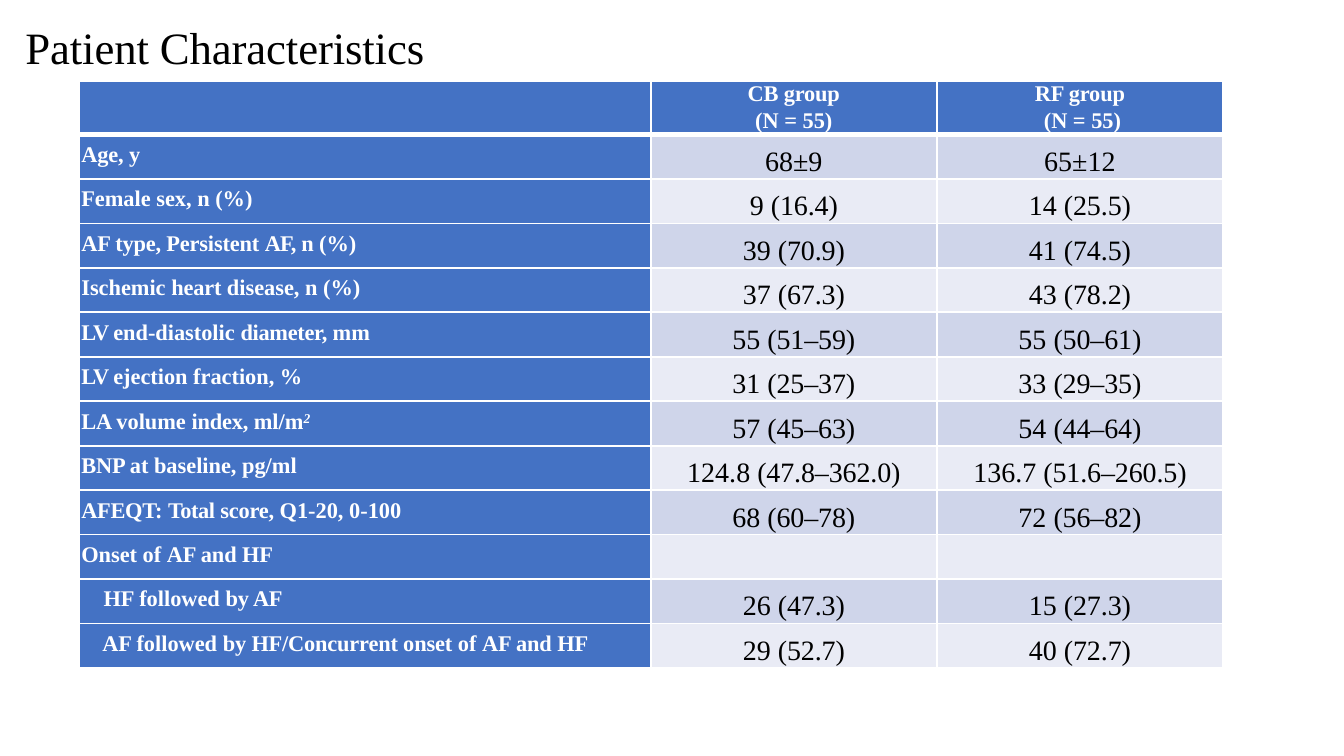
from typing import NamedTuple

from lxml import etree
from pptx import Presentation
from pptx import util as u
from pptx.dml import color
from pptx.enum import text
from pptx.oxml import ns

COLOURS = {"blue": "4472C4", "dark_band": "CFD5EA", "light_band": "E9EBF5",
           "white": "FFFFFF", "black": "000000"}
FONT = "Times New Roman"
COLUMN_WIDTHS = (14.4, 7.21, 7.21)
HEADER_HEIGHT, ROW_HEIGHT = 1.35, 1.12
THIN, THICK = 1.5, 4.25


class Run(NamedTuple):
    words: str
    spacing: float = 0
    raised: bool = False


class Style(NamedTuple):
    size: float
    colour: str
    bold: bool = False
    centred: bool = False
    before: float = 0
    line: float | None = None


class Characteristic(NamedTuple):
    label: list[Run]
    cb: str
    rf: str
    indent: float = 0.05


TITLE = Style(32, "black", before=1)
GROUP = Style(16, "white", bold=True, centred=True, line=18.3)
GROUP_SIZE = GROUP._replace(before=0.7, line=18.4)
LABEL = Style(16, "white", bold=True, before=6)
VALUE = Style(20, "black", centred=True, before=7, line=23.6)

CHARACTERISTICS = [
    Characteristic([Run("Age, ", -0.1), Run("y")], "68±9", "65±12"),
    Characteristic([Run("Female sex, n (%)")], "9 (16.4)", "14 (25.5)"),
    Characteristic([Run("AF type, Persistent ", -0.1), Run("AF, ", -0.6), Run("n (%)")],
                   "39 (70.9)", "41 (74.5)"),
    Characteristic([Run("Ischemic "), Run("heart ", -0.1), Run("disease, n (%)")],
                   "37 (67.3)", "43 (78.2)"),
    Characteristic([Run("LV ", -0.8), Run("end-diastolic "), Run("diameter, ", -0.2), Run("mm")],
                   "55 (51–59)", "55 (50–61)"),
    Characteristic([Run("LV ", -0.8), Run("ejection fraction, %")], "31 (25–37)", "33 (29–35)"),
    Characteristic([Run("LA ", -0.1), Run("volume "), Run("index, ", -0.1), Run("ml/m"),
                    Run("2", raised=True)], "57 (45–63)", "54 (44–64)"),
    Characteristic([Run("BNP ", -0.1), Run("at baseline, pg/ml")],
                   "124.8 (47.8–362.0)", "136.7 (51.6–260.5)"),
    Characteristic([Run("AFEQT: ", -0.2), Run("Total ", -0.3), Run("score, ", -0.1),
                    Run("Q1-20, 0-100")], "68 (60–78)", "72 (56–82)"),
    Characteristic([Run("Onset of "), Run("AF and ", -0.1), Run("HF")], "", ""),
    Characteristic([Run("HF followed "), Run("by AF", -0.1)], "26 (47.3)", "15 (27.3)", 0.61),
    Characteristic([Run("AF ", -0.1), Run("followed "), Run("by HF/Concurrent onset ", -0.1),
                    Run("of "), Run("AF and ", -0.1), Run("HF")],
                   "29 (52.7)", "40 (72.7)", 0.58),
]


def rgb(name: str) -> color.RGBColor:
    return color.RGBColor.from_string(COLOURS[name])


def write(paragraph, runs: list[Run], style: Style, indent: float = 0) -> None:
    paragraph.alignment = text.PP_ALIGN.CENTER if style.centred else text.PP_ALIGN.LEFT
    paragraph.space_before = u.Pt(style.before)
    if style.line:
        paragraph.line_spacing = u.Pt(style.line)
    paragraph._p.get_or_add_pPr().set("marL", str(u.Cm(indent)))
    for part in runs:
        run = paragraph.add_run()
        run.text = part.words
        font = run.font
        font.name, font.size, font.bold = FONT, u.Pt(style.size), style.bold
        font.color.rgb = rgb(style.colour)
        properties = run._r.get_or_add_rPr()
        properties.set("spc", str(round(part.spacing * 100)))
        if part.raised:
            font.italic, font.size = True, u.Pt(16.5)
            properties.set("baseline", "25000")


def value_runs(value: str) -> list[Run]:
    count, gap, bracket = value.partition(" ")
    return [Run(count + gap)] + ([Run(bracket, -0.1)] if bracket else [])


def format_cell(cell, fill: str, inset: float, top: float, bottom: float) -> None:
    cell.margin_left = cell.margin_right = cell.margin_bottom = 0
    cell.margin_top = u.Cm(inset)
    properties = cell._tc.get_or_add_tcPr()
    for side, width in (("L", THIN), ("R", THIN), ("T", top), ("B", bottom)):
        border = etree.SubElement(properties, ns.qn(f"a:ln{side}"), w=str(u.Pt(width)))
        solid = etree.SubElement(border, ns.qn("a:solidFill"))
        etree.SubElement(solid, ns.qn("a:srgbClr"), val=COLOURS["white"])
    cell.fill.solid()
    cell.fill.fore_color.rgb = rgb(fill)


def draw_title(slide) -> None:
    frame = slide.shapes.add_textbox(u.Cm(0.61), u.Cm(0.46), u.Cm(10.21), u.Cm(1.42)).text_frame
    frame.word_wrap = True
    frame.margin_left = frame.margin_right = frame.margin_bottom = 0
    frame.margin_top = u.Cm(0.03)
    write(frame.paragraphs[0], [Run("Patient Characteristics", -0.1)], TITLE, 0.03)


def draw_header(table) -> None:
    for column, group in enumerate(("", "CB group", "RF group")):
        cell = table.cell(0, column)
        format_cell(cell, "blue", 0, THIN, THICK)
        if group:
            write(cell.text_frame.paragraphs[0], [Run(group, -0.1)], GROUP)
            write(cell.text_frame.add_paragraph(), [Run("(N = 55)")], GROUP_SIZE,
                  0.13 if group == "RF group" else 0)


def draw_characteristic(table, row: int, item: Characteristic) -> None:
    top = THICK if row == 1 else THIN
    label = table.cell(row, 0)
    format_cell(label, "blue", 0.2, top, THIN)
    write(label.text_frame.paragraphs[0], item.label, LABEL, item.indent)
    band = "dark_band" if row % 2 else "light_band"
    for column, value in enumerate((item.cb, item.rf), start=1):
        cell = table.cell(row, column)
        format_cell(cell, band, 0.25 if value else 0, top, THIN)
        if value:
            write(cell.text_frame.paragraphs[0], value_runs(value), VALUE)


def draw_table(slide) -> None:
    count = len(CHARACTERISTICS)
    table = slide.shapes.add_table(
        count + 1, len(COLUMN_WIDTHS), u.Cm(2), u.Cm(2.04),
        u.Cm(sum(COLUMN_WIDTHS)), u.Cm(HEADER_HEIGHT + count * ROW_HEIGHT)).table
    for column, width in zip(table.columns, COLUMN_WIDTHS):
        column.width = u.Cm(width)
    for row, line in enumerate(table.rows):
        line.height = u.Cm(ROW_HEIGHT if row else HEADER_HEIGHT)
    draw_header(table)
    for row, item in enumerate(CHARACTERISTICS, start=1):
        draw_characteristic(table, row, item)


def main() -> None:
    deck = Presentation()
    deck.slide_width, deck.slide_height = u.Cm(33.87), u.Cm(19.05)
    slide = deck.slides.add_slide(deck.slide_layouts[6])
    draw_table(slide)
    draw_title(slide)
    deck.save("out.pptx")


if __name__ == "__main__":
    main()
